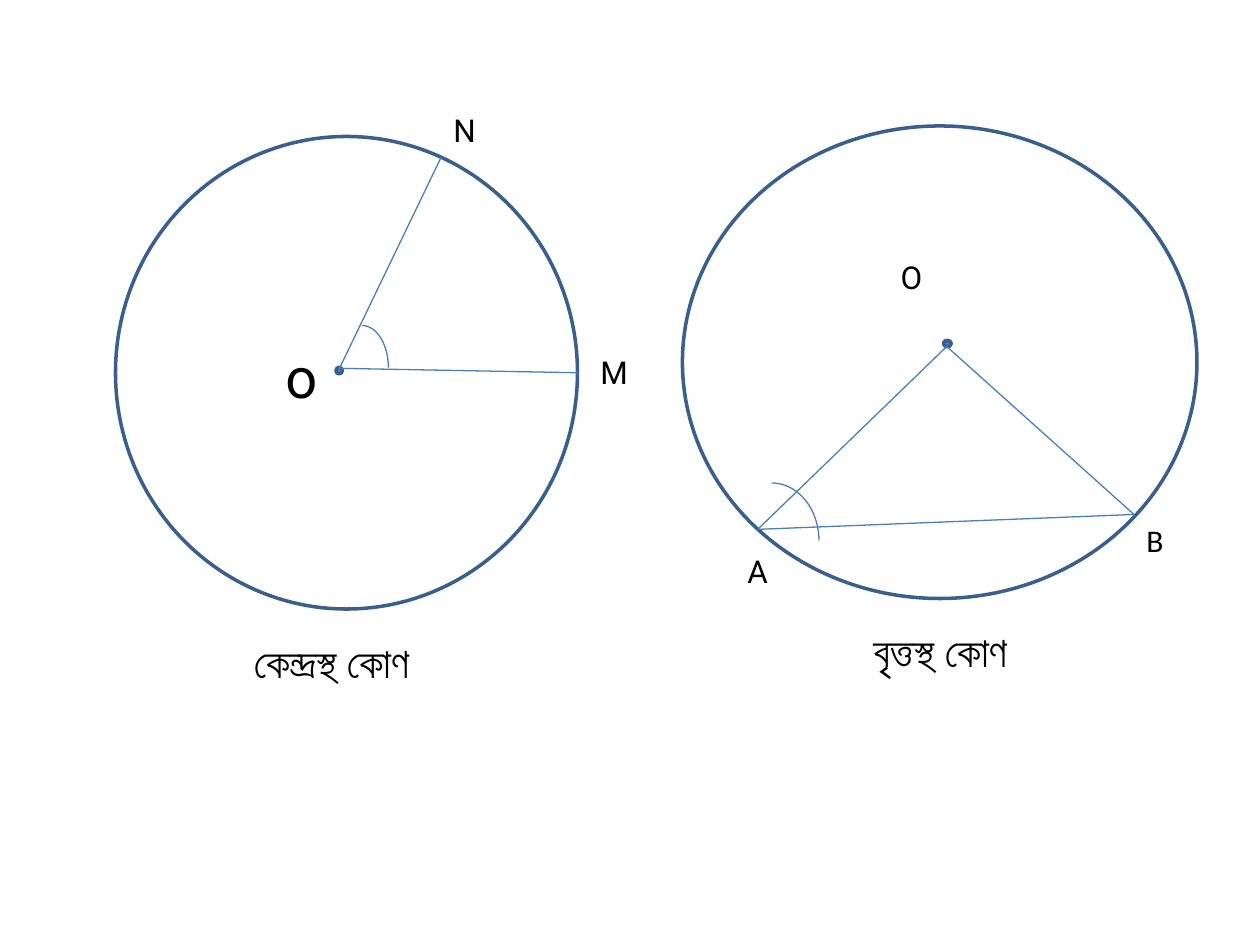
from typing import NamedTuple, Optional

from lxml.etree import SubElement
from pptx import Presentation
from pptx.dml.color import RGBColor
from pptx.enum.shapes import MSO_CONNECTOR, MSO_SHAPE
from pptx.enum.text import MSO_AUTO_SIZE
from pptx.oxml.ns import qn
from pptx.util import Pt

OUTLINE, RAY, DOT, INK = "3A5F8C", "4B7EBC", "4F81BD", "000000"


# All lengths are in points
class Outline(NamedTuple):
    kind: MSO_SHAPE
    box: tuple
    line: str
    weight: float
    fill: Optional[str] = None


class Label(NamedTuple):
    text: str
    box: tuple
    size: float = 18
    font: str = "Roboto"
    wrap: bool = True


def rgb(value: str) -> RGBColor:
    return RGBColor.from_string(value)


def draw_outline(s, o: Outline) -> None:
    sp = s.shapes.add_shape(o.kind, *map(Pt, o.box))
    sp.shadow.inherit = False
    if o.fill:
        sp.fill.solid()
        sp.fill.fore_color.rgb = rgb(o.fill)
    else:
        sp.fill.background()
    sp.line.color.rgb = rgb(o.line)
    sp.line.width = Pt(o.weight)


def draw_segment(s, start: tuple, end: tuple) -> None:
    cx = s.shapes.add_connector(MSO_CONNECTOR.STRAIGHT, *map(Pt, start + end))
    cx.line.color.rgb = rgb(RAY)
    cx.line.width = Pt(0.75)
    SubElement(cx._element.spPr, qn("a:effectLst"))


def draw_label(s, label: Label) -> None:
    tf = s.shapes.add_textbox(*map(Pt, label.box)).text_frame
    tf.word_wrap = label.wrap
    tf.auto_size = MSO_AUTO_SIZE.SHAPE_TO_FIT_TEXT
    r = tf.paragraphs[0].add_run()
    r.text = label.text
    for name, value in {"name": label.font, "size": Pt(label.size)}.items():
        setattr(r.font, name, value)
    r.font.color.rgb = rgb(INK)


# Corners of the two angles
CENTRE, M, N = (194, 210.5), (330, 213), (252, 90)
APEX, A, B = (541, 198), (433, 302.5), (648, 294)

OUTLINES = [
    # Circles and their centre dots
    Outline(MSO_SHAPE.OVAL, (66, 78, 264, 270), OUTLINE, 2),
    Outline(MSO_SHAPE.OVAL, (192, 210, 3.6, 3.6), OUTLINE, 2, DOT),
    Outline(MSO_SHAPE.OVAL, (390, 72, 294, 270), OUTLINE, 2),
    Outline(MSO_SHAPE.OVAL, (539.2, 194.5, 4.3, 3.6), OUTLINE, 2, DOT),
    # Angle marks
    Outline(MSO_SHAPE.ARC, (192, 186, 30, 48), RAY, 0.75),
    Outline(MSO_SHAPE.ARC, (414, 276, 54, 66), RAY, 0.75),
]

SEGMENTS = [(CENTRE, M), (CENTRE, N), (APEX, B), (APEX, A), (A, B)]

LABELS = [
    # Points
    Label("o", (156, 192, 42, 46), 32),
    Label("M", (336, 198, 24, 30)),
    Label("N", (252, 60, 72, 29)),
    Label("O", (507.5, 144, 35, 29)),
    Label("B", (648, 294, 72, 29), font="Calibri"),
    Label("A", (420, 312, 28, 29), wrap=False),
    # Captions
    Label("কেন্দ্রস্থ কোণ", (138, 360, 156, 36), 24),
    Label("বৃত্তস্থ কোণ", (492, 354, 168, 36), 24),
]


def main() -> None:
    prs = Presentation()
    prs.slide_width, prs.slide_height = Pt(720), Pt(540)
    s = prs.slides.add_slide(prs.slide_layouts[6])
    for outline in OUTLINES:
        draw_outline(s, outline)
    for start, end in SEGMENTS:
        draw_segment(s, start, end)
    for label in LABELS:
        draw_label(s, label)
    prs.save("out.pptx")


if __name__ == "__main__":
    main()
